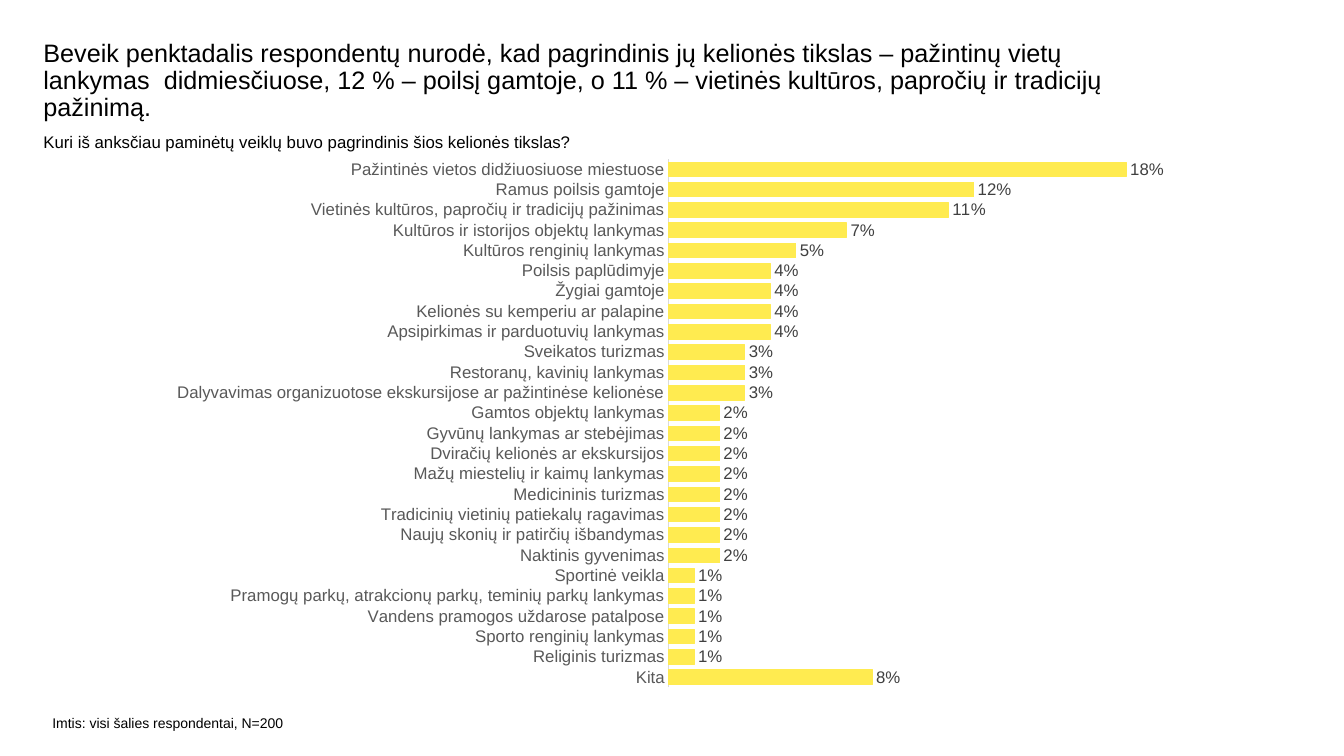
from lxml.etree import SubElement
from pptx import Presentation
from pptx.chart.data import CategoryChartData
from pptx.dml.color import RGBColor
from pptx.enum.chart import XL_CHART_TYPE, XL_LABEL_POSITION, XL_TICK_MARK
from pptx.oxml.ns import qn
from pptx.util import Inches, Pt

BLACK = RGBColor(0x00, 0x00, 0x00)
AXIS_TEXT = RGBColor(0x59, 0x59, 0x59)
LABEL_TEXT = RGBColor(0x40, 0x40, 0x40)
AXIS_LINE = RGBColor(0xD9, 0xD9, 0xD9)
YELLOW = RGBColor(0xFF, 0xEB, 0x50)
FONT = "Arial"

ACTIVITIES = [
    ("Pažintinės vietos didžiuosiuose miestuose", 18),
    ("Ramus poilsis gamtoje", 12),
    ("Vietinės kultūros, papročių ir tradicijų pažinimas", 11),
    ("Kultūros ir istorijos objektų lankymas", 7),
    ("Kultūros renginių lankymas", 5),
    ("Poilsis paplūdimyje", 4),
    ("Žygiai gamtoje", 4),
    ("Kelionės su kemperiu ar palapine", 4),
    ("Apsipirkimas ir parduotuvių lankymas", 4),
    ("Sveikatos turizmas", 3),
    ("Restoranų, kavinių lankymas", 3),
    ("Dalyvavimas organizuotose ekskursijose ar pažintinėse kelionėse", 3),
    ("Gamtos objektų lankymas", 2),
    ("Gyvūnų lankymas ar stebėjimas", 2),
    ("Dviračių kelionės ar ekskursijos", 2),
    ("Mažų miestelių ir kaimų lankymas", 2),
    ("Medicininis turizmas", 2),
    ("Tradicinių vietinių patiekalų ragavimas", 2),
    ("Naujų skonių ir patirčių išbandymas", 2),
    ("Naktinis gyvenimas", 2),
    ("Sportinė veikla", 1),
    ("Pramogų parkų, atrakcionų parkų, teminių parkų lankymas", 1),
    ("Vandens pramogos uždarose patalpose", 1),
    ("Sporto renginių lankymas", 1),
    ("Religinis turizmas", 1),
    ("Kita", 8),
]

deck = Presentation()
deck.slide_width, deck.slide_height = Inches(13.33), Inches(7.5)
page = deck.slides.add_slide(deck.slide_layouts[6])


def area(left, top, width, height):
    """Turn percentages of the slide's size into lengths."""
    across, down = deck.slide_width / 100, deck.slide_height / 100
    return int(left * across), int(top * down), int(width * across), int(height * down)


def add_text(text, place, size, line_spacing=1.0):
    frame = page.shapes.add_textbox(*area(*place)).text_frame
    frame.word_wrap = True
    frame.margin_left = frame.margin_top = frame.margin_right = frame.margin_bottom = 0
    para = frame.paragraphs[0]
    para.line_spacing = line_spacing
    span = para.add_run()
    span.text = text
    span.font.name, span.font.size = FONT, Pt(size)
    span.font.color.rgb = BLACK


add_text("Beveik penktadalis respondentų nurodė, kad pagrindinis jų kelionės tikslas – "
         "pažintinų vietų lankymas  didmiesčiuose, 12 % – poilsį gamtoje, o 11 % – "
         "vietinės kultūros, papročių ir tradicijų pažinimą.",
         (3.23, 5.33, 78.84, 8), size=18, line_spacing=0.9)
add_text("Kuri iš anksčiau paminėtų veiklų buvo pagrindinis šios kelionės tikslas?",
         (3.23, 17.47, 89.2, 8.13), size=12)
add_text("Imtis: visi šalies respondentai, N=200", (3.9, 94.53, 18.98, 3.2), size=10)

# Bar chart of travel purposes
data = CategoryChartData(number_format="0%")
data.categories = [name for name, percent in ACTIVITIES]
data.add_series("Series 1", [percent / 100 for name, percent in ACTIVITIES])
chart = page.shapes.add_chart(XL_CHART_TYPE.BAR_CLUSTERED,
                              *area(11.7, 19.6, 77.2, 72.8), data).chart
chart.has_legend = chart.has_title = False
chart.font.name, chart.font.size = FONT, Pt(10)
chart.font.color.rgb = BLACK

names = chart.category_axis
names.reverse_order = True
names.major_tick_mark = names.minor_tick_mark = XL_TICK_MARK.NONE
names.format.line.color.rgb = AXIS_LINE
names.format.line.width = Pt(0.75)

shares = chart.value_axis
shares.minimum_scale, shares.maximum_scale = 0, 0.2
shares.has_major_gridlines = False
shares.visible = False

bars = chart.plots[0]
bars.gap_width = 40
bars.vary_by_categories = False
series = bars.series[0]
series.format.fill.solid()
series.format.fill.fore_color.rgb = YELLOW
series.format.line.color.rgb = YELLOW
series.format.line.width = Pt(0.75)

labels = series.data_labels
labels.show_value = True
labels.position = XL_LABEL_POSITION.OUTSIDE_END
labels.number_format, labels.number_format_is_linked = "0%", False
for font, color in ((names.tick_labels.font, AXIS_TEXT), (labels.font, LABEL_TEXT)):
    font.name, font.size = FONT, Pt(12)
    font.color.rgb = color

# Fix the inner plot area as shares of the chart
plot_area = chart.plots[0]._element.getparent()
for old_layout in plot_area.findall(qn("c:layout")):
    plot_area.remove(old_layout)
layout = SubElement(plot_area, qn("c:layout"))
plot_area.insert(0, layout)
manual = SubElement(layout, qn("c:manualLayout"))
for tag, value in (("layoutTarget", "inner"), ("xMode", "edge"), ("yMode", "edge"),
                   ("x", 0.493), ("y", 0.02), ("w", 0.49), ("h", 0.96)):
    SubElement(manual, qn(f"c:{tag}")).set("val", str(value))

deck.save("out.pptx")
